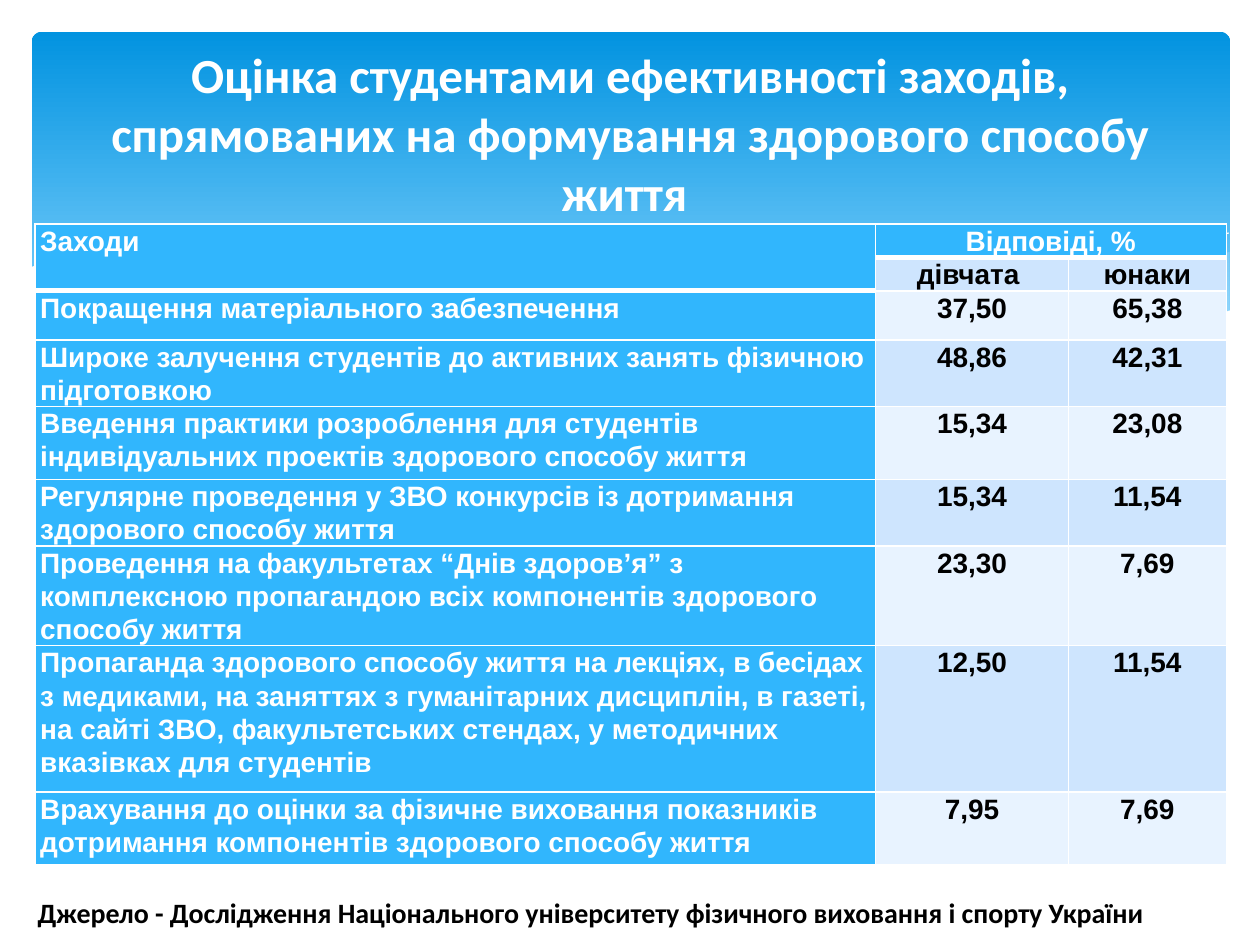
from dataclasses import dataclass

from lxml.etree import SubElement
from pptx import Presentation
from pptx.dml.color import RGBColor as Rgb
from pptx.enum.shapes import MSO_SHAPE as Shape
from pptx.enum.text import MSO_ANCHOR as Anchor, PP_ALIGN as Align
from pptx.oxml.ns import qn
from pptx.util import Cm, Pt


@dataclass(frozen=True)
class Theme:
    white: str = "FFFFFF"
    black: str = "000000"
    card_top: str = "0293E0"
    card_bottom: str = "83D3FE"
    wave: str = "C6E7FC"
    accent: str = "31B6FD"
    bands: tuple = ("CEE5FE", "E8F3FF")
    heading_font: str = "Calibri"
    table_font: str = "Arial"
    title_size: int = 28
    body_size: int = 16


# Wave outlines, in hundredths of a centimetre
RIGHT_WAVE = [(2479, 508), (2301, 541), (2187, 566), (1979, 615), (1852, 643),
              (1679, 673), (1791, 688), (1923, 701), (2068, 706), (2215, 696),
              (2339, 673), (2410, 653), (2479, 627)]
MIDDLE_WAVE = [(2268, 693), (2050, 660), (1882, 627), (1598, 564), (1445, 528),
               (1306, 503), (1123, 480), (965, 470), (833, 475), (726, 485),
               (919, 516), (1140, 564), (1346, 610), (1570, 655), (1765, 686),
               (1933, 704), (2078, 706), (2177, 704)]
LONG_LINE = [(785, 495), (874, 483), (1019, 475), (1191, 480), (1354, 493),
             (1544, 518), (1765, 556), (2019, 612), (2304, 691)]
SHORT_LINE = [(1557, 653), (1765, 597), (1971, 549), (2200, 505), (2347, 483),
              (2477, 470)]
WHITE_WAVE = [(2482, 625), (2362, 665), (2223, 693), (2055, 704), (1844, 691),
              (1646, 665), (1410, 622), (1135, 559), (927, 513), (742, 483),
              (584, 470), (450, 467), (302, 475), (193, 495), (102, 521),
              (58, 541), (58, 836), (2482, 836)]

COLUMNS = [16.94, 3.89, 3.18]
ROWS = [0.51, 0.51, 0.99, 0.99, 1.47, 0.99, 1.96, 2.95, 1.47]
ANSWERS = [
    ("Заходи", "Відповіді, %", ""),
    ("", "дівчата ", "юнаки"),
    ("Покращення матеріального забезпечення", "37,50", "65,38"),
    ("Широке залучення студентів до активних занять фізичною підготовкою",
     "48,86", "42,31"),
    ("Введення практики розроблення для студентів індивідуальних проектів "
     "здорового способу життя", "15,34", "23,08"),
    ("Регулярне проведення у ЗВО конкурсів із дотримання здорового способу життя",
     "15,34", "11,54"),
    ("Проведення на факультетах “Днів здоров’я” з комплексною пропагандою "
     "всіх компонентів здорового способу життя", "23,30", "7,69"),
    ("Пропаганда здорового способу життя на лекціях, в бесідах з медиками, "
     "на заняттях з гуманітарних дисциплін, в газеті, на сайті ЗВО, "
     "факультетських стендах, у методичних вказівках для студентів",
     "12,50", "11,54"),
    ("Врахування до оцінки за фізичне виховання показників дотримання "
     "компонентів здорового способу життя", "7,95", "7,69"),
]


def apply(target, formats):
    for name, value in formats.items():
        setattr(target, name, value)


class SlideBuilder:
    def __init__(self, page, theme):
        self.page = page
        self.theme = theme

    def card(self, left, top, width, height):
        box = self.page.shapes.add_shape(
            Shape.ROUNDED_RECTANGLE, Cm(left), Cm(top), Cm(width), Cm(height))
        box.adjustments[0] = 0.03
        box.shadow.inherit = False
        box.line.fill.background()
        box.fill.gradient()
        box.fill.gradient_angle = 270
        stops = zip(box.fill.gradient_stops, (0, 0.9),
                    (self.theme.card_top, self.theme.card_bottom))
        for stop, position, color in stops:
            stop.position = position
            stop.color.rgb = Rgb.from_string(color)

    def wave(self, points, fill=None, opacity=100):
        """Draw a filled wave, or an open hairline when no fill is given."""
        builder = self.page.shapes.build_freeform(*points[0], scale=Cm(0.01))
        builder.add_line_segments(points[1:], close=fill is not None)
        shape = builder.convert_to_shape()
        shape.shadow.inherit = False
        if fill is None:
            shape.fill.background()
            shape.line.color.rgb = Rgb.from_string(self.theme.white)
            shape.line.width = Pt(0)
            return
        shape.line.fill.background()
        shape.fill.solid()
        shape.fill.fore_color.rgb = Rgb.from_string(fill)
        if opacity < 100:
            color = shape.element.spPr.find(qn("a:solidFill")).find(qn("a:srgbClr"))
            SubElement(color, qn("a:alpha"), val=str(opacity * 1000))

    def add_words(self, frame, words, font, size, color, align, spacing=1.0):
        para = frame.paragraphs[0]
        apply(para, {"alignment": align, "line_spacing": spacing})
        span = para.add_run()
        span.text = words
        apply(span.font, {"name": font, "size": Pt(size), "bold": True})
        span.font.color.rgb = Rgb.from_string(color)

    def text(self, area, words, size, color, align, anchor):
        box = self.page.shapes.add_textbox(*map(Cm, area))
        apply(box.text_frame, {"word_wrap": True, "vertical_anchor": anchor})
        self.add_words(box.text_frame, words, self.theme.heading_font, size, color, align)

    def borders(self, cell, bottom):
        properties = cell._tc.get_or_add_tcPr()
        widths = {"a:lnL": 1, "a:lnR": 1, "a:lnT": 1, "a:lnB": bottom}
        for index, (tag, width) in enumerate(widths.items()):
            line = properties.makeelement(qn(tag), {"w": str(Pt(width))})
            fill = SubElement(line, qn("a:solidFill"))
            SubElement(fill, qn("a:srgbClr"), val=self.theme.white)
            properties.insert(index, line)

    def table(self, left, top, height, columns, rows, content):
        frame = self.page.shapes.add_table(
            len(rows), len(columns), Cm(left), Cm(top), Cm(sum(columns)), Cm(height))
        grid = frame.table
        for column, width in zip(grid.columns, columns):
            column.width = Cm(width)
        for row, row_height in zip(grid.rows, rows):
            row.height = Cm(row_height)
        frame.height = Cm(height)
        grid.cell(0, 0).merge(grid.cell(1, 0))
        grid.cell(0, 1).merge(grid.cell(0, 2))

        for i, values in enumerate(content):
            for j, words in enumerate(values):
                self.cell(grid.cell(i, j), i, j, words)

    def cell(self, cell, i, j, words):
        theme = self.theme
        accented = i == 0 or j == 0
        apply(cell, {"margin_left": Cm(0.1), "margin_right": Cm(0.1),
                     "margin_top": 0, "margin_bottom": 0})
        cell.fill.solid()
        cell.fill.fore_color.rgb = Rgb.from_string(
            theme.accent if accented else theme.bands[(i - 1) % 2])
        self.borders(cell, bottom=3 if i == 0 or (i, j) == (1, 0) else 1)
        if words:
            self.add_words(cell.text_frame, words, theme.table_font, theme.body_size,
                           theme.white if accented else theme.black,
                           Align.CENTER if j else Align.LEFT, 1.07)


def main():
    theme = Theme()
    deck = Presentation()
    apply(deck, {"slide_width": Cm(25.4), "slide_height": Cm(19.05)})
    builder = SlideBuilder(deck.slides.add_slide(deck.slide_layouts[6]), theme)

    # Header card with waves
    builder.card(0.64, 0.64, 24.16, 6.86)
    builder.wave(RIGHT_WAVE, theme.wave, 29)
    builder.wave(MIDDLE_WAVE, theme.wave, 40)
    builder.wave(LONG_LINE)
    builder.wave(SHORT_LINE)
    builder.wave(WHITE_WAVE, theme.white)

    # Survey table
    builder.table(0.71, 4.52, 13.41, COLUMNS, ROWS, ANSWERS)

    # Title and source
    builder.text((1.27, 0.94, 22.86, 3.48),
                 "Оцінка студентами ефективності заходів, спрямованих на "
                 "формування здорового способу життя ",
                 theme.title_size, theme.white, Align.CENTER, Anchor.MIDDLE)
    builder.text((0.51, 17.93, 23.52, 1.63),
                 "Джерело - Дослідження Національного університету фізичного "
                 "виховання і спорту України",
                 theme.body_size, theme.black, Align.LEFT, Anchor.TOP)

    deck.save("out.pptx")


if __name__ == "__main__":
    main()
